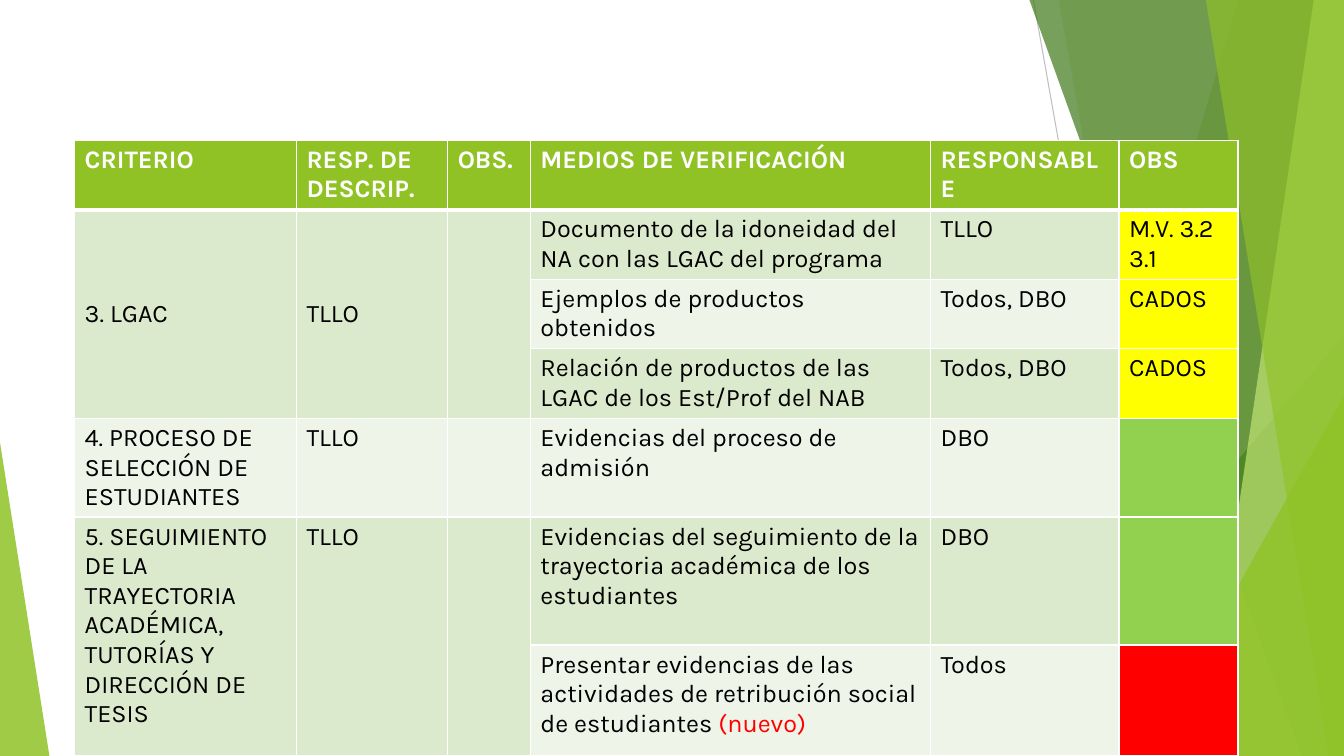
from lxml import etree
from pptx import Presentation
from pptx.dml.color import RGBColor
from pptx.enum.shapes import MSO_CONNECTOR, MSO_SHAPE
from pptx.enum.text import MSO_ANCHOR
from pptx.oxml.ns import qn
from pptx.util import Inches, Pt

STRAIGHT = MSO_CONNECTOR.STRAIGHT
TRIANGLE = MSO_SHAPE.ISOSCELES_TRIANGLE
MIDDLE = MSO_ANCHOR.MIDDLE

COLORS = {
    "white": "FFFFFF", "black": "000000", "red": "FF0000", "yellow": "FFFF00",
    "green": "90C226", "leaf": "54A021", "forest": "3F7819", "lime": "C0E474",
    "done": "92D050", "band": "DBE9CD", "pale": "EEF4E8",
    "gray": "BFBFBF", "light_gray": "D9D9D9",
}
WIDTH, HEIGHT = 13.33, 7.5


class SlideBuilder:
    """Holds the style and the current slide, and draws its elements."""

    def __init__(self, slide, font="Karla", size=18):
        self.slide = slide
        self.font = font
        self.size = size

    def color(self, name):
        return RGBColor.from_string(COLORS[name])

    def paint(self, shape, color, opacity):
        shape.shadow.inherit = False
        shape.line.fill.background()
        shape.fill.solid()
        shape.fill.fore_color.rgb = self.color(color)
        tint = shape.fill._xPr.find(qn("a:solidFill"))[0]
        etree.SubElement(tint, qn("a:alpha"), val=str(opacity * 1000))

    def line(self, start, end, color):
        ray = self.slide.shapes.add_connector(
            STRAIGHT, *(Inches(value) for value in start + end))
        ray.line.color.rgb = self.color(color)
        ray.line.width = Pt(0.75)
        etree.SubElement(ray._element.spPr, qn("a:effectLst"))

    def panel(self, top_left, top_right, bottom_left, color, opacity):
        corners = [(top_right, 0), (WIDTH, 0), (WIDTH, HEIGHT), (bottom_left, HEIGHT)]
        if top_left is not None:
            corners[0] = (top_left, 0)
        points = [(Inches(x), Inches(y)) for x, y in corners]
        outline = self.slide.shapes.build_freeform(*points[0])
        outline.add_line_segments(points[1:], close=True)
        self.paint(outline.convert_to_shape(), color, opacity)

    def triangle(self, left, top, width, apex, color, opacity):
        wedge = self.slide.shapes.add_shape(
            TRIANGLE, Inches(left), Inches(top), Inches(width), Inches(HEIGHT - top))
        wedge.adjustments[0] = apex
        self.paint(wedge, color, opacity)

    def borders(self, cell, bottom):
        properties = cell._tc.get_or_add_tcPr()
        for place, (side, points) in enumerate(
                zip(("lnL", "lnR", "lnT", "lnB"), (1, 1, 1, bottom))):
            edge = etree.Element(qn(f"a:{side}"), w=str(Pt(points)))
            fill = etree.SubElement(edge, qn("a:solidFill"))
            etree.SubElement(fill, qn("a:srgbClr"), val=COLORS["white"])
            properties.insert(place, edge)

    def cell(self, cell, text, fill, header):
        cell.fill.solid()
        cell.fill.fore_color.rgb = self.color(fill)
        self.borders(cell, 3 if header else 1)
        body, mark, note = text.partition("(nuevo)")
        cell.text_frame.text = body
        if mark:
            cell.text_frame.paragraphs[0].add_run().text = mark + note
        for paragraph in cell.text_frame.paragraphs:
            paragraph.font.size = Pt(self.size)
            for run in paragraph.runs:
                run.font.name = self.font
                run.font.size = Pt(self.size)
                run.font.bold = header
                ink = "white" if header else "red" if run.text == mark else "black"
                run.font.color.rgb = self.color(ink)

    def table(self, left, top, widths, heights, rows, status_fills, row_spans):
        grid = self.slide.shapes.add_table(
            len(rows), len(widths), Inches(left), Inches(top),
            Inches(sum(widths)), Inches(sum(heights))).table
        for column, width in zip(grid.columns, widths):
            column.width = Inches(width)
        for row, height in zip(grid.rows, heights):
            row.height = Inches(height)
        for r, texts in enumerate(rows):
            for c, text in enumerate(texts):
                fill = "green" if r == 0 else "band" if r % 2 else "pale"
                if r and c == len(texts) - 1:
                    fill = status_fills[r - 1]
                self.cell(grid.cell(r, c), text, fill, r == 0)
        for first, last in row_spans:
            for c in range(3):
                grid.cell(first, c).merge(grid.cell(last, c))
        for c in range(2):
            grid.cell(1, c).vertical_anchor = MIDDLE


def main():
    deck = Presentation()
    deck.slide_width, deck.slide_height = Inches(WIDTH), Inches(HEIGHT)
    builder = SlideBuilder(deck.slides.add_slide(deck.slide_layouts[6]))

    builder.line((10.25, 0), (11.58, HEIGHT), "gray")
    builder.line((WIDTH, 4.03), (8.12, HEIGHT), "light_gray")
    builder.panel(None, 12.28, 10.04, "green", 30)
    builder.panel(10.5, None, 11.83, "green", 20)
    builder.triangle(9.77, 3.33, 3.56, 1, "leaf", 72)
    builder.panel(10.21, None, 12.91, "forest", 70)
    builder.panel(None, 13.03, 11.92, "lime", 70)
    builder.panel(11.96, None, 13.18, "green", 65)
    builder.triangle(11.34, 3.93, 1.99, 1, "green", 80)
    builder.triangle(0, 4.39, 0.49, 0, "green", 85)

    criteria = [
        ("CRITERIO", "RESP. DE\nDESCRIP.", "OBS.", "MEDIOS DE VERIFICACIÓN",
         "RESPONSABLE", "OBS"),
        ("3. LGAC", "TLLO", "",
         "Documento de la idoneidad del NA con las LGAC del programa",
         "TLLO", "M.V. 3.2 3.1"),
        ("", "", "", "Ejemplos de productos obtenidos", "Todos, DBO", "CADOS"),
        ("", "", "", "Relación de productos de las LGAC de los Est/Prof del NAB",
         "Todos, DBO", "CADOS"),
        ("4. PROCESO DE SELECCIÓN DE ESTUDIANTES", "TLLO", "",
         "Evidencias del proceso de admisión", "DBO", ""),
        ("5. SEGUIMIENTO DE LA TRAYECTORIA ACADÉMICA, TUTORÍAS Y DIRECCIÓN DE TESIS",
         "TLLO", "",
         "Evidencias del seguimiento de la trayectoria académica de los estudiantes",
         "DBO", ""),
        ("", "", "",
         "Presentar evidencias de las actividades de retribución social "
         "de estudiantes (nuevo)", "Todos", ""),
    ]
    builder.table(
        0.74, 1.39,
        widths=[2.2, 1.5, 0.82, 3.97, 1.87, 1.18],
        heights=[0.69] * 4 + [0.98, 1.27, 1.1],
        rows=criteria,
        status_fills=["yellow"] * 3 + ["done"] * 2 + ["red"],
        row_spans=[(1, 3), (5, 6)])

    deck.save("out.pptx")


if __name__ == "__main__":
    main()
